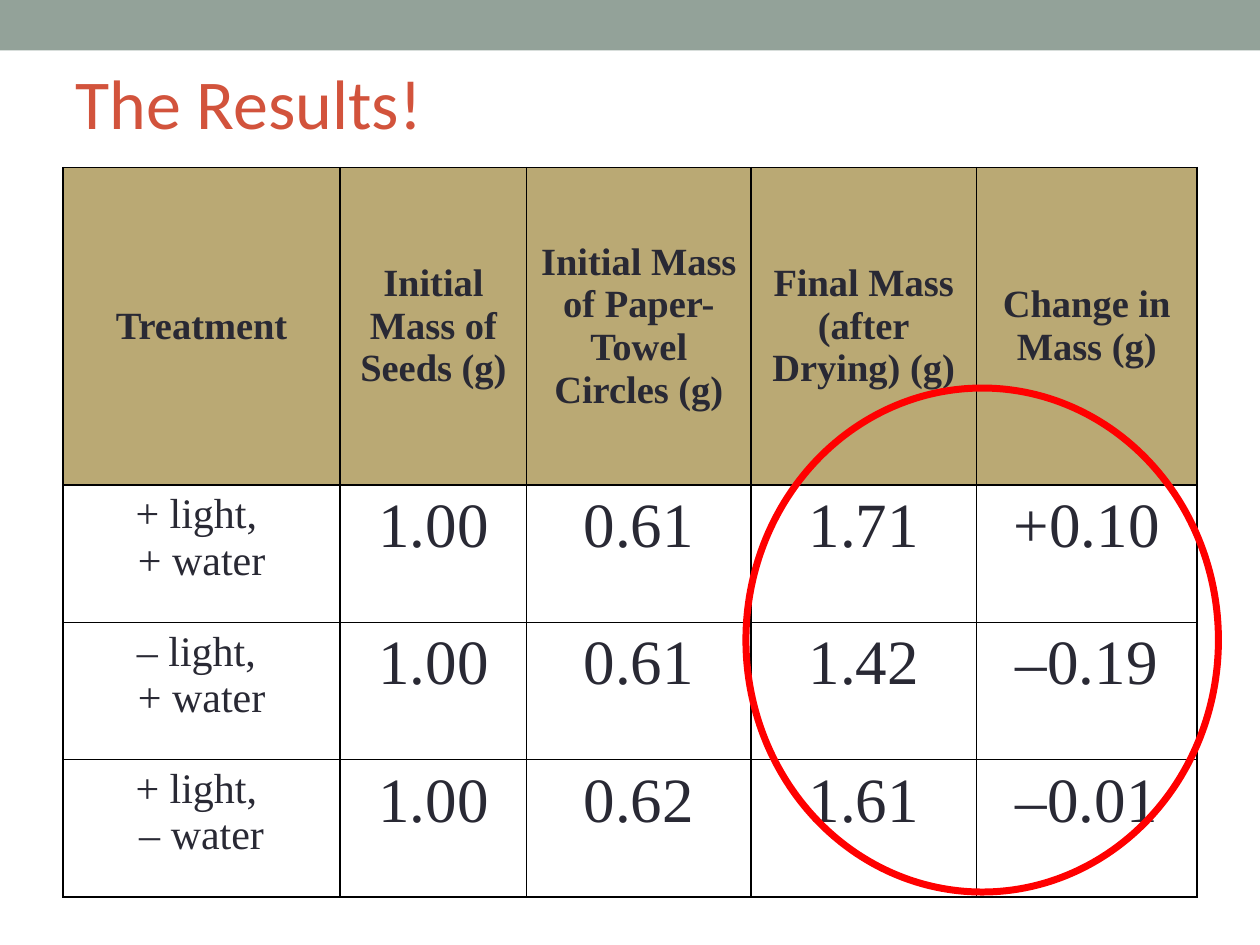
from dataclasses import dataclass

from lxml.etree import SubElement
from pptx import Presentation
from pptx.dml.color import RGBColor
from pptx.enum.shapes import MSO_SHAPE as Shape
from pptx.enum.text import MSO_ANCHOR as Anchor, PP_ALIGN as Align
from pptx.oxml.ns import qn
from pptx.util import Inches, Pt


@dataclass(frozen=True)
class Theme:
    band: str = "93A299"
    title: str = "D2533C"
    header_fill: str = "BAA974"
    text: str = "292934"
    border: str = "000000"
    highlight: str = "FF0000"
    title_font: str = "Calibri"
    table_font: str = "Times New Roman"
    title_size: int = 40
    header_size: int = 22
    treatment_size: int = 24
    value_size: int = 36


THEME = Theme()

COLUMN_WIDTHS = [2.2, 1.48, 1.78, 1.79, 1.75]
ROW_HEIGHTS = [2.52, 1.09, 1.09, 1.09]

# Each line of a cell is a paragraph of its own
RESULTS = [
    ["Treatment", "Initial\nMass of\nSeeds (g)",
     "Initial Mass\nof Paper- Towel\nCircles (g)",
     "Final Mass\n(after\nDrying) (g)", "Change in\nMass (g)"],
    ["+ light, \n+ water", "1.00", "0.61", "1.71", "+0.10"],
    ["– light, \n+ water", "1.00", "0.61", "1.42", "–0.19"],
    ["+ light, \n– water", "1.00", "0.62", "1.61", "–0.01"],
]


def color(value):
    return RGBColor.from_string(value)


def style_paragraph(paragraph, font_name, size, font_color, bold=False):
    font = paragraph.font
    font.name, font.size, font.bold = font_name, Pt(size), bold
    font.color.rgb = color(font_color)


def add_band(slide, width):
    band = slide.shapes.add_shape(Shape.RECTANGLE, 0, 0, width, Inches(0.4))
    band.shadow.inherit = False
    band.fill.solid()
    band.fill.fore_color.rgb = color(THEME.band)
    band.line.fill.background()


def set_title(slide, text):
    title = slide.shapes.title
    title.left, title.top = Inches(0.5), Inches(0.42)
    title.width, title.height = Inches(8.58), Inches(0.77)
    frame = title.text_frame
    frame.text = text
    frame.vertical_anchor = Anchor.MIDDLE
    paragraph = frame.paragraphs[0]
    paragraph.alignment = Align.LEFT
    style_paragraph(paragraph, THEME.title_font, THEME.title_size, THEME.title)


def add_borders(cell):
    properties = cell._tc.get_or_add_tcPr()
    for side in ("a:lnL", "a:lnR", "a:lnT", "a:lnB"):
        line = SubElement(properties, qn(side), w=str(Pt(1)))
        fill = SubElement(line, qn("a:solidFill"))
        SubElement(fill, qn("a:srgbClr"), val=THEME.border)


def fill_cell(cell, text, size, is_header):
    add_borders(cell)
    if is_header:
        cell.fill.solid()
        cell.fill.fore_color.rgb = color(THEME.header_fill)
    else:
        cell.fill.background()
    cell.vertical_anchor = Anchor.MIDDLE if is_header else Anchor.TOP
    cell.text = text
    for paragraph in cell.text_frame.paragraphs:
        paragraph.alignment = Align.CENTER
        style_paragraph(paragraph, THEME.table_font, size, THEME.text, is_header)


def add_results_table(slide):
    table = slide.shapes.add_table(
        len(ROW_HEIGHTS), len(COLUMN_WIDTHS), Inches(0.5), Inches(1.33),
        Inches(sum(COLUMN_WIDTHS)), Inches(sum(ROW_HEIGHTS))).table
    table.first_row = table.horz_banding = False
    for column, width in zip(table.columns, COLUMN_WIDTHS):
        column.width = Inches(width)
    for row, height in zip(table.rows, ROW_HEIGHTS):
        row.height = Inches(height)
    for row_index, texts in enumerate(RESULTS):
        for column_index, text in enumerate(texts):
            if row_index == 0:
                size = THEME.header_size
            elif column_index == 0:
                size = THEME.treatment_size
            else:
                size = THEME.value_size
            fill_cell(table.cell(row_index, column_index), text, size, row_index == 0)


def add_highlight(slide):
    ring = slide.shapes.add_shape(
        Shape.OVAL, Inches(5.92), Inches(3.08), Inches(3.75), Inches(4))
    ring.shadow.inherit = False
    ring.fill.background()
    ring.line.color.rgb = color(THEME.highlight)
    ring.line.width = Pt(4)


def main():
    presentation = Presentation()
    presentation.slide_width, presentation.slide_height = Inches(10), Inches(7.5)
    slide = presentation.slides.add_slide(presentation.slide_layouts[5])

    # Heading
    add_band(slide, presentation.slide_width)
    set_title(slide, "The Results!")

    # Measurements, with the final masses and changes ringed
    add_results_table(slide)
    add_highlight(slide)

    presentation.save("out.pptx")


if __name__ == "__main__":
    main()
